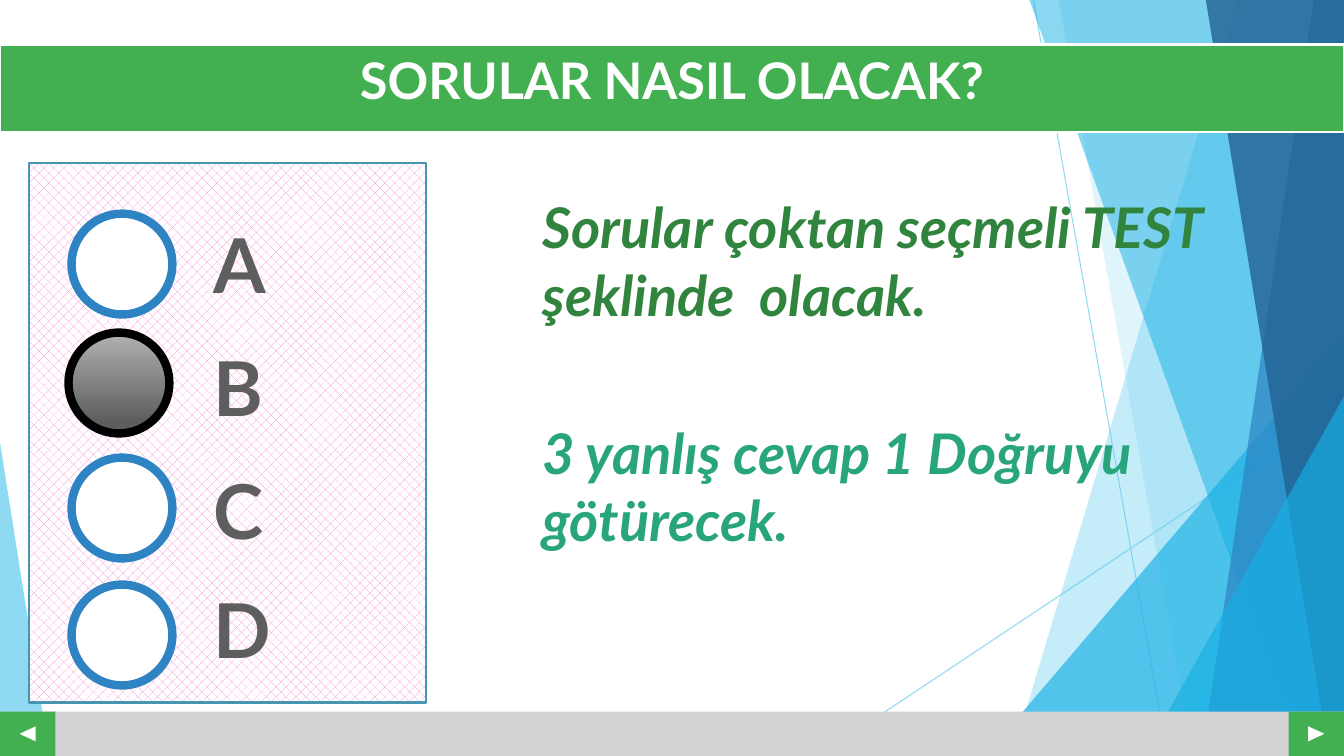
from dataclasses import dataclass

from lxml.etree import SubElement
from pptx import Presentation
from pptx.dml.color import RGBColor
from pptx.enum.dml import MSO_PATTERN
from pptx.enum.shapes import MSO_CONNECTOR, MSO_SHAPE
from pptx.enum.text import MSO_ANCHOR, PP_ALIGN
from pptx.oxml.ns import qn
from pptx.util import Inches, Pt

RECT, OVAL, TRI = MSO_SHAPE.RECTANGLE, MSO_SHAPE.OVAL, MSO_SHAPE.ISOSCELES_TRIANGLE
STRAIGHT = MSO_CONNECTOR.STRAIGHT
DOTS = MSO_PATTERN.PERCENT_30
LEFT, CENTER = PP_ALIGN.LEFT, PP_ALIGN.CENTER
TOP, MIDDLE = MSO_ANCHOR.TOP, MSO_ANCHOR.MIDDLE
WIDE, HIGH = 13.33, 7.5


@dataclass(frozen=True)
class Theme:
    """Colours, font and type sizes of the slide."""
    font: str = "Lato"
    head: int = 36
    body: int = 40
    mark: int = 54
    white: str = "FFFFFF"
    black: str = "000000"
    green: str = "42B051"
    gray: str = "D3D3D3"
    sky: str = "5FCBEF"
    cyan: str = "17B0E4"
    blue: str = "2E83C3"
    navy: str = "226292"
    pink: str = "FB85D4"
    edge: str = "4696B1"
    light: str = "B2B2B2"
    dark: str = "5E5E5E"
    forest: str = "31843D"
    teal: str = "29A57D"


T = Theme()


def rgb(code):
    """Return a colour from its hex code."""
    return RGBColor.from_string(code)


def fade(shape, alpha):
    """Set the opacity, in percent, of a shape's only colour."""
    color = next(shape.element.spPr.iter(qn("a:srgbClr")))
    SubElement(color, qn("a:alpha")).set("val", str(alpha * 1000))


def paint(shape, fill, line=None, width=1, alpha=100):
    """Give a shape its fill, outline and opacity."""
    shape.shadow.inherit = False
    shape.fill.solid()
    shape.fill.fore_color.rgb = rgb(fill)
    if line:
        shape.line.color.rgb = rgb(line)
        shape.line.width = Pt(width)
    else:
        shape.line.fill.background()
    if alpha < 100:
        fade(shape, alpha)


def add_form(slide, kind, box, fill, peak=None, **look):
    """Add a painted preset shape, with its peak moved if given."""
    shape = slide.shapes.add_shape(kind, *map(Inches, box))
    if peak is not None:
        shape.adjustments[0] = peak
    paint(shape, fill, **look)
    return shape


def add_band(slide, top, foot, fill, alpha):
    """Add a slanted band from a top and a foot point to the right edge."""
    maker = slide.shapes.build_freeform(Inches(top), 0)
    edge = [(WIDE, 0), (WIDE, HIGH), (foot, HIGH)]
    maker.add_line_segments([(Inches(x), Inches(y)) for x, y in edge])
    paint(maker.convert_to_shape(), fill, alpha=alpha)


def add_ray(slide, *ends):
    """Add a thin pale line."""
    ray = slide.shapes.add_connector(STRAIGHT, *map(Inches, ends))
    ray.line.color.rgb = rgb(T.sky)
    ray.line.width = Pt(0.75)
    fade(ray, 70)
    SubElement(ray.element.spPr, qn("a:effectLst"))


def write(shape, text, size, color, align=LEFT, anchor=TOP, italic=False,
          wrap=True, pad=(0.1, 0.05)):
    """Write bold text into a shape."""
    frame = shape.text_frame
    frame.word_wrap = wrap
    frame.vertical_anchor = anchor
    frame.margin_left = frame.margin_right = Inches(pad[0])
    frame.margin_top = frame.margin_bottom = Inches(pad[1])
    para = frame.paragraphs[0]
    para.alignment = align
    run = para.add_run()
    run.text = text
    font = run.font
    font.name, font.size, font.color.rgb = T.font, Pt(size), rgb(color)
    font.bold, font.italic = True, italic


def add_text(slide, box, text, size, color, **look):
    """Add a text box."""
    shape = slide.shapes.add_textbox(*map(Inches, box))
    write(shape, text, size, color, **look)


def add_decor(slide):
    """Add the rays, slanted bands and corner triangles."""
    add_ray(slide, 10.25, 0, 11.58, HIGH)
    add_ray(slide, WIDE, 4.03, 8.12, HIGH)
    add_band(slide, 12.28, 10.04, T.sky, 36)
    add_band(slide, 10.5, 11.83, T.sky, 20)
    add_form(slide, TRI, (9.77, 3.33, 3.56, 4.17), T.cyan, peak=1, alpha=66)
    add_band(slide, 10.21, 12.91, T.cyan, 50)
    add_band(slide, 13.03, 11.92, T.blue, 70)
    add_band(slide, 11.96, 13.18, T.navy, 80)
    add_form(slide, TRI, (11.34, 3.93, 1.99, 3.57), T.cyan, peak=1, alpha=66)
    add_form(slide, TRI, (0, 4.39, 0.49, 3.11), T.sky, peak=0, alpha=70)


def add_foot(slide):
    """Add the bottom bar with its two arrow buttons."""
    add_form(slide, RECT, (0, 7.06, WIDE, 0.44), T.gray)
    for left, turn in ((0, 270), (12.78, 90)):
        add_form(slide, RECT, (left, 7.06, 0.55, 0.44), T.green)
        arrow = add_form(slide, TRI, (left + 0.2, 7.2, 0.15, 0.16), T.white)
        arrow.rotation = turn


def add_title(slide, text):
    """Place the title bar above the shapes drawn so far."""
    title = slide.shapes.title
    title.left, title.top = 0, Inches(0.44)
    title.width, title.height = Inches(WIDE), Inches(0.87)
    paint(title, T.green, line=T.white, width=2)
    write(title, text, T.head, T.white, align=CENTER)
    tree = title.element.getparent()
    tree.append(title.element)


def add_panel(slide):
    """Add the dotted panel behind the choices."""
    panel = add_form(slide, RECT, (0.29, 1.62, 3.94, 5.35), T.white,
                     line=T.edge, width=1.5)
    fill = panel.fill
    fill.patterned()
    fill.pattern = DOTS
    fill.fore_color.rgb, fill.back_color.rgb = rgb(T.pink), rgb(T.white)


def add_choice(slide, name, left, top, base, picked):
    """Add an answer circle and its letter."""
    ring = add_form(slide, OVAL, (left, top, 1, 1), T.white,
                    line=T.black if picked else T.blue, width=6)
    if picked:
        ring.fill.gradient()
        ring.fill.gradient_angle = 270
        stops = zip(ring.fill.gradient_stops, (0, 0.88), (T.light, T.dark))
        for stop, place, color in stops:
            stop.position, stop.color.rgb = place, rgb(color)
    add_text(slide, (2.02, base, 0.67, 1.01), name, T.mark, T.dark,
             align=CENTER, wrap=False)


def main():
    """Build and save the slide."""
    deck = Presentation()
    deck.slide_width, deck.slide_height = Inches(WIDE), Inches(HIGH)
    slide = deck.slides.add_slide(deck.slide_layouts[5])
    add_decor(slide)
    add_foot(slide)
    add_panel(slide)
    add_title(slide, "SORULAR NASIL OLACAK?")
    choices = (("A", 0.71, 2.12, 2.11), ("B", 0.68, 3.3, 3.33),
               ("C", 0.71, 4.54, 4.55), ("D", 0.71, 5.8, 5.73))
    for name, left, top, base in choices:
        add_choice(slide, name, left, top, base, name == "B")
    notes = ((1.84, "Sorular çoktan seçmeli TEST şeklinde  olacak.", T.forest),
             (4.08, "3 yanlış cevap 1 Doğruyu götürecek.", T.teal))
    for top, text, color in notes:
        add_text(slide, (5.25, top, 7.09, 1.48), text, T.body, color,
                 anchor=MIDDLE, italic=True, pad=(0.13, 0.07))
    deck.save("out.pptx")


if __name__ == "__main__":
    main()
